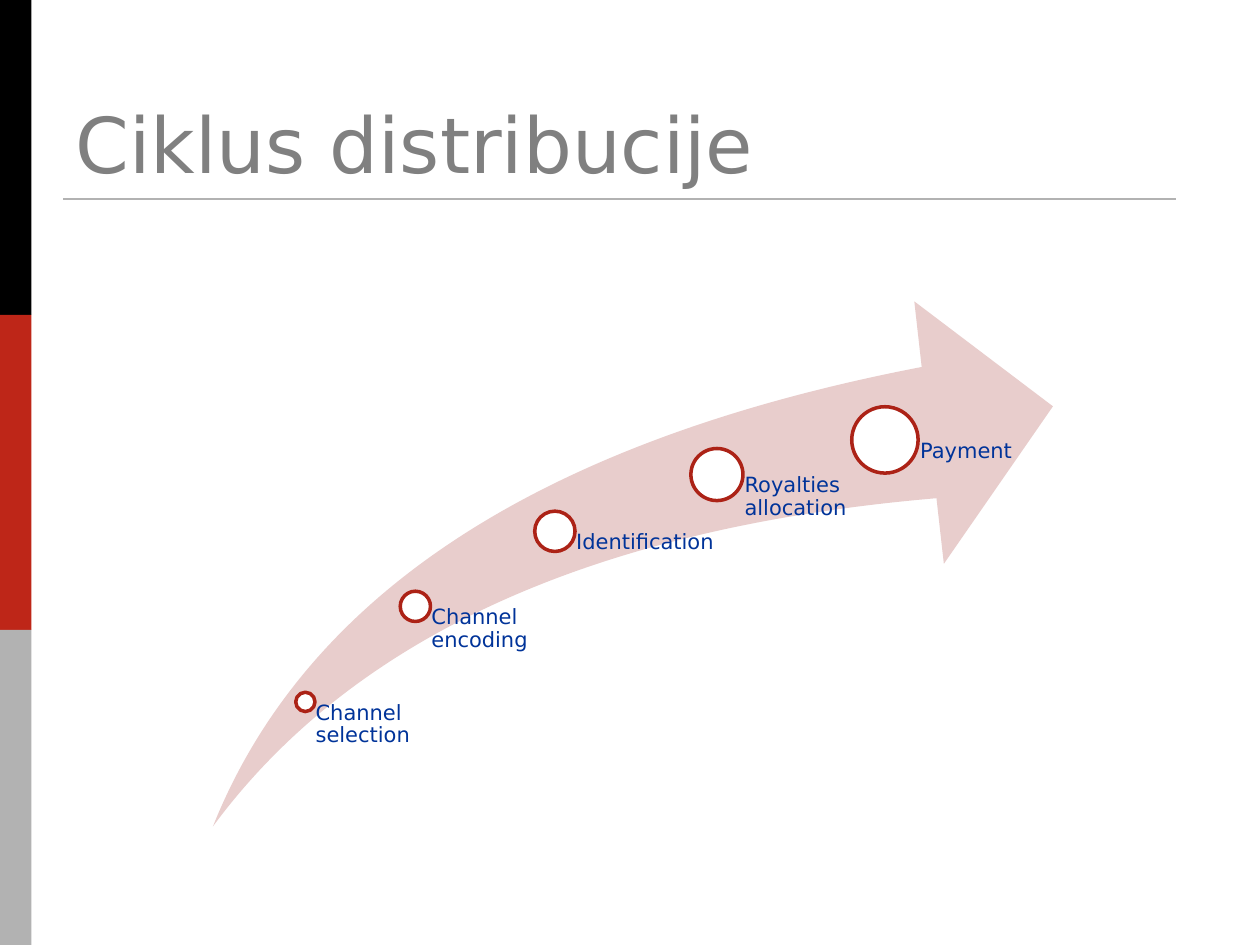
from pptx import Presentation
from pptx.dml.color import RGBColor
from pptx.enum.shapes import MSO_CONNECTOR, MSO_SHAPE
from pptx.enum.text import MSO_ANCHOR, PP_ALIGN
from pptx.oxml.ns import qn
from pptx.util import Pt
from lxml.etree import SubElement

FONT = "DejaVu Sans"
STAGES = [
    ("Channel selection", 0.11, 0.763, 0.023, 0.13),
    ("Channel encoding", 0.241, 0.581, 0.036, 0.167),
    ("Identification", 0.407, 0.438, 0.048, 0.193),
    ("Royalties allocation", 0.6, 0.33, 0.062, 0.2),
    ("Payment", 0.8, 0.264, 0.079, 0.2),
]


def color(value):
    """Return the colour for a hex string."""
    return RGBColor.from_string(value)


def write(frame, text, size, ink, anchor=MSO_ANCHOR.TOP, spacing=1.0, insets=(7.2, 3.6, 7.2, 3.6)):
    """Fill a text frame with one formatted, left-aligned paragraph."""
    frame.word_wrap = True
    frame.vertical_anchor = anchor
    frame.margin_left, frame.margin_top, frame.margin_right, frame.margin_bottom = map(Pt, insets)
    para = frame.paragraphs[0]
    para.alignment = PP_ALIGN.LEFT
    para.line_spacing = spacing
    span = para.add_run()
    span.text = text
    span.font.name = FONT
    span.font.size = Pt(size)
    span.font.color.rgb = color(ink)


def add_figure(shapes, kind, left, top, width, height, fill, outline=None):
    """Add a flat preset shape with an optional 2 pt outline."""
    figure = shapes.add_shape(kind, Pt(left), Pt(top), Pt(width), Pt(height))
    figure.shadow.inherit = False
    figure.fill.solid()
    figure.fill.fore_color.rgb = color(fill)
    if outline:
        figure.line.color.rgb = color(outline)
        figure.line.width = Pt(2)
    else:
        figure.line.fill.background()
    return figure


def add_side_bars(page, left, top, width, height):
    """Stack three equal colour bars in the given box."""
    fills = ["000000", "BE2618", "B2B2B2"]
    step = height / len(fills)
    for index, fill in enumerate(fills):
        add_figure(page.shapes, MSO_SHAPE.RECTANGLE, left, top + index * step, width, step, fill)


def add_heading(page, left, top, width, height):
    """Place the title in the given box and the rule beneath it."""
    title = page.shapes.title
    title.left, title.top, title.width, title.height = map(Pt, (left, top, width, height))
    write(title.text_frame, "Ciklus distribucije", 44, "808080", anchor=MSO_ANCHOR.BOTTOM)
    level = Pt(top + height + 2.2)
    rule = page.shapes.add_connector(MSO_CONNECTOR.STRAIGHT, Pt(left), level, Pt(left + 636), level)
    rule.line.color.rgb = color("B2B2B2")
    rule.line.width = Pt(1.5)
    SubElement(rule._element.spPr, qn("a:effectLst"))


def add_cycle(page, left, top, width, height):
    """Draw the rising arrow with its stage markers and labels in the given box."""
    shapes = page.shapes.add_group_shape().shapes
    arrow = add_figure(shapes, MSO_SHAPE.SWOOSH_ARROW, left, top, width, height, "E8CDCC")
    arrow.adjustments[0] = arrow.adjustments[1] = 0.25
    for name, across, down, marker, label in STAGES:
        x, y, size = left + across * width, top + down * height, marker * width
        add_figure(shapes, MSO_SHAPE.OVAL, x - size / 2, y - size / 2, size, size, "FFFFFF", "AC2216")
        box = shapes.add_textbox(Pt(x), Pt(y), Pt(label * width), Pt(top + height - y))
        write(box.text_frame, name, 12, "003399", spacing=0.9, insets=(0.53 * size, 0, 0, 0))


def main():
    """Build and save the deck."""
    deck = Presentation()
    deck.slide_width, deck.slide_height = Pt(720), Pt(540)
    page = deck.slides.add_slide(deck.slide_layouts[5])
    page.background.fill.solid()
    page.background.fill.fore_color.rgb = color("FFFFFF")
    add_side_bars(page, 0, 0, 18, 540)
    add_heading(page, 36, 21.6, 648, 90)
    add_cycle(page, 121.7, 172.2, 480, 300)
    deck.save("out.pptx")


if __name__ == "__main__":
    main()
